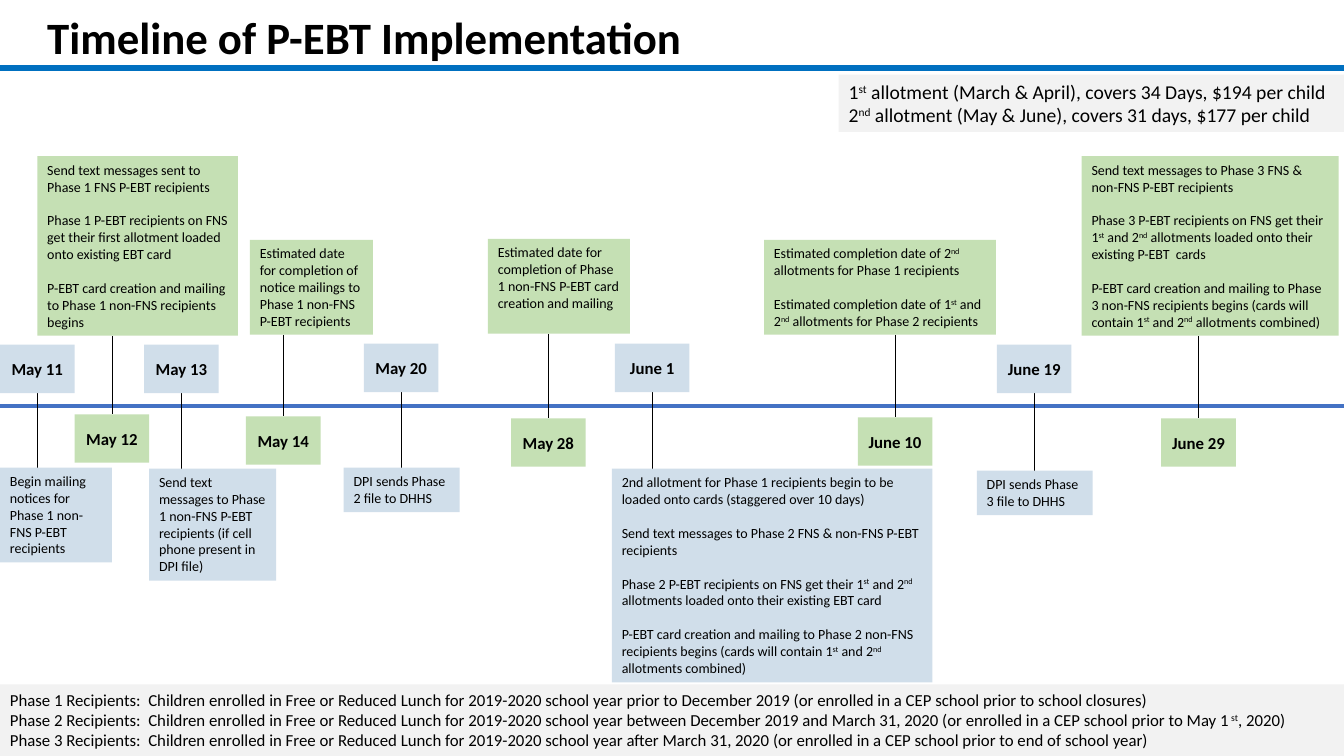
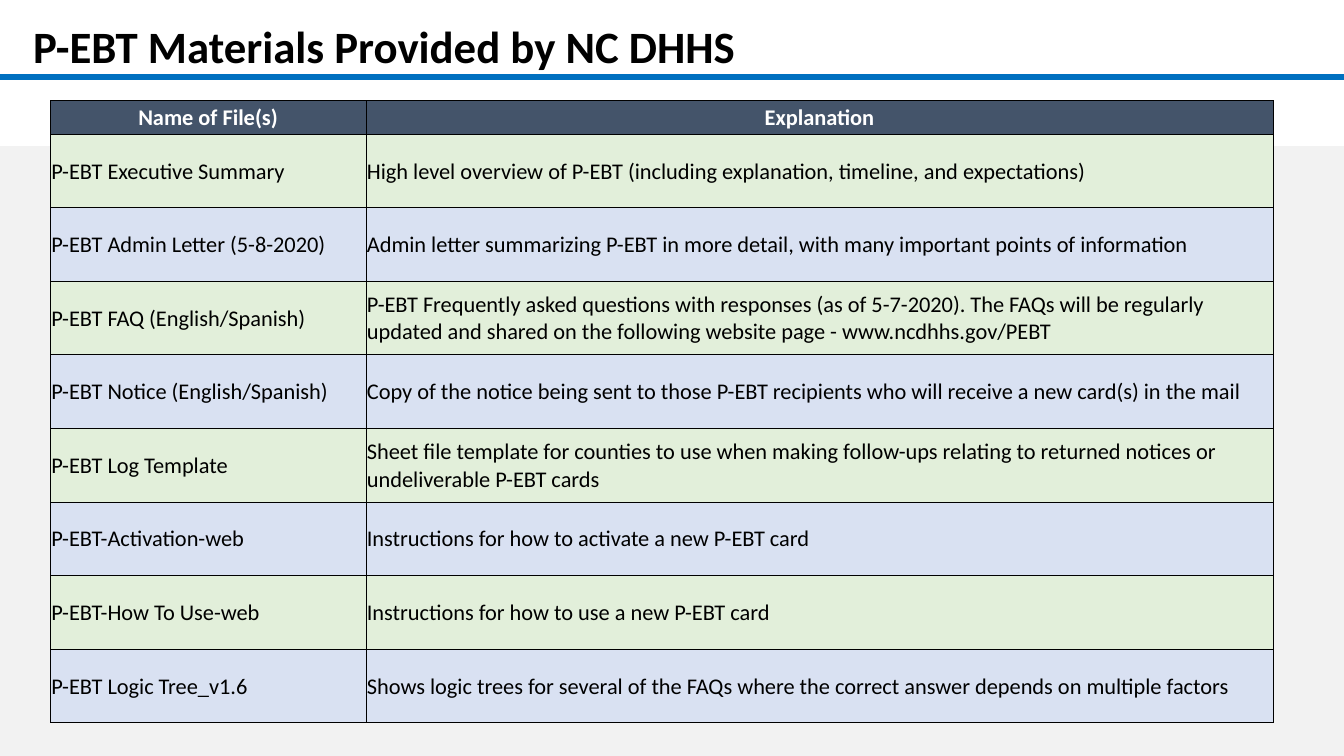
"""Build two slides on P-EBT: the implementation timeline and the materials table."""
from dataclasses import dataclass

from lxml.etree import SubElement
from pptx import Presentation
from pptx.dml.color import RGBColor
from pptx.enum.shapes import MSO_CONNECTOR, MSO_SHAPE
from pptx.enum.text import MSO_ANCHOR, PP_ALIGN
from pptx.oxml.ns import qn
from pptx.util import Inches, Pt

CELL = Inches(0.1)
COLUMNS, ROWS = 133.33, 75
FONT = "Calibri"
BLACK = RGBColor(0x00, 0x00, 0x00)
WHITE = RGBColor(0xFF, 0xFF, 0xFF)
TITLE_BLUE = RGBColor(0x00, 0x70, 0xC0)
AXIS_BLUE = RGBColor(0x44, 0x72, 0xC4)
PALE_BLUE = RGBColor(0xD0, 0xDE, 0xEA)
PALE_GREEN = RGBColor(0xC5, 0xE0, 0xB4)
PALE_GREY = RGBColor(0xF2, 0xF2, 0xF2)
HEADING_SLATE = RGBColor(0x44, 0x54, 0x6A)
ROW_GREEN = RGBColor(0xE2, 0xEF, 0xDA)
ROW_BLUE = RGBColor(0xD9, 0xE1, 0xF2)

AXIS_ROW = 40.3
DATE_WIDTH, DATE_HEIGHT = 7.4, 4.8
TABLE_COLUMNS = (31.3, 90)
HEADING_HEIGHT, MATERIAL_HEIGHT = 3.3, 7.3


@dataclass
class Event:
    """A date on the timeline with its note, measured in grid cells."""
    date: str
    left: float
    top: float
    note: tuple
    paragraphs: tuple


EVENTS = (
    Event("May 11", 0, 34.2, (0, 46.4, 11.1, 9.4), (
        "Begin mailing notices for Phase 1 non-FNS P-EBT recipients",)),
    Event("May 12", 7.4, 41.1, (3.7, 15.5, 19.9, 17.8), (
        "Send text messages sent to Phase 1 FNS P-EBT recipients",
        "Phase 1 P-EBT recipients on FNS get their first allotment loaded onto existing EBT card",
        "P-EBT card creation and mailing to Phase 1 non-FNS recipients begins")),
    Event("May 13", 14.3, 34.2, (14.8, 46.5, 12.6, 11.1), (
        "Send text messages to Phase 1 non-FNS P-EBT recipients (if cell phone present in DPI file)",)),
    Event("May 14", 24.4, 41.3, (24.8, 23.8, 12.2, 9.4), (
        "Estimated date for completion of notice mailings to Phase 1 non-FNS P-EBT recipients",)),
    Event("May 20", 36.1, 34.1, (34.1, 46.4, 11.5, 4.4), (
        "DPI sends Phase 2 file to DHHS",)),
    Event("May 28", 50.7, 41.5, (48.4, 23.7, 14.1, 9.4), (
        "Estimated date for completion of Phase 1 non-FNS P-EBT card creation and mailing",)),
    Event("June 1", 61, 34.1, (60.7, 46.5, 31.8, 21.2), (
        "2nd allotment for Phase 1 recipients begin to be loaded onto cards (staggered over 10 days)",
        "Send text messages to Phase 2 FNS & non-FNS P-EBT recipients",
        "Phase 2 P-EBT recipients on FNS get their 1^st^ and 2^nd^ allotments loaded onto their "
        "existing EBT card",
        "P-EBT card creation and mailing to Phase 2 non-FNS recipients begins (cards will contain "
        "1^st^ and 2^nd^ allotments combined)")),
    Event("June 10", 85.1, 41.4, (75.8, 23.8, 23, 9.4), (
        "Estimated completion date of 2^nd^ allotments for Phase 1 recipients",
        "Estimated completion date of 1^st^ and 2^nd^ allotments for Phase 2 recipients")),
    Event("June 19", 98.9, 34.2, (96.9, 46.7, 11.5, 4.4), (
        "DPI sends Phase 3 file to DHHS",)),
    Event("June 29", 115.2, 41.5, (107.3, 15.5, 25.5, 17.8), (
        "Send text messages to Phase 3 FNS & non-FNS P-EBT recipients",
        "Phase 3 P-EBT recipients on FNS get their 1^st^ and 2^nd^ allotments loaded onto their "
        "existing P-EBT  cards",
        "P-EBT card creation and mailing to Phase 3 non-FNS recipients begins (cards will contain "
        "1^st^ and 2^nd^ allotments combined)")),
)

ALLOTMENTS = (
    "1^st^ allotment (March & April), covers 34 Days, $194 per child",
    "2^nd^ allotment (May & June), covers 31 days, $177 per child",
)

PHASES = (
    "Phase 1 Recipients:  Children enrolled in Free or Reduced Lunch for 2019-2020 school year "
    "prior to December 2019 (or enrolled in a CEP school prior to school closures)",
    "Phase 2 Recipients:  Children enrolled in Free or Reduced Lunch for 2019-2020 school year "
    "between December 2019 and March 31, 2020 (or enrolled in a CEP school prior to May 1^st^, 2020)",
    "Phase 3 Recipients:  Children enrolled in Free or Reduced Lunch for 2019-2020 school year "
    "after March 31, 2020 (or enrolled in a CEP school prior to end of school year)",
)

MATERIALS = (
    ("Name of File(s)", "Explanation"),
    ("P-EBT Executive Summary",
     "High level overview of P-EBT (including explanation, timeline, and expectations)"),
    ("P-EBT Admin Letter (5-8-2020)",
     "Admin letter summarizing P-EBT in more detail, with many important points of information"),
    ("P-EBT FAQ (English/Spanish)",
     "P-EBT Frequently asked questions with responses (as of 5-7-2020). The FAQs will be regularly "
     "updated and shared on the following website page - www.ncdhhs.gov/PEBT"),
    ("P-EBT Notice (English/Spanish)",
     "Copy of the notice being sent to those P-EBT recipients who will receive a new card(s) in the mail"),
    ("P-EBT Log Template",
     "Sheet file template for counties to use when making follow-ups relating to returned notices or "
     "undeliverable P-EBT cards"),
    ("P-EBT-Activation-web", "Instructions for how to activate a new P-EBT card"),
    ("P-EBT-How To Use-web", "Instructions for how to use a new P-EBT card"),
    ("P-EBT Logic Tree_v1.6",
     "Shows logic trees for several of the FAQs where the correct answer depends on multiple factors"),
)


def grid(*cells):
    """Turn counts of grid cells into lengths."""
    return [round(count * CELL) for count in cells]


def write(frame, paragraphs, size, bold=False, color=BLACK, align=PP_ALIGN.LEFT, gap=0):
    """Fill a text frame; parts between carets are superscript."""
    frame.word_wrap = True
    for index, text in enumerate(paragraphs):
        para = frame.add_paragraph() if index else frame.paragraphs[0]
        para.alignment = align
        para.space_before = Pt(gap if index else 0)
        for position, part in enumerate(text.split("^")):
            span = para.add_run()
            span.text = part
            span.font.name, span.font.size = FONT, Pt(size)
            span.font.bold, span.font.color.rgb = bold, color
            if position % 2:
                span.font._element.set("baseline", "30000")


def add_panel(page, area, fill, paragraphs=(), size=10, gap=0):
    """Add a flat rectangle with text from its top left."""
    box = page.shapes.add_shape(MSO_SHAPE.RECTANGLE, *grid(*area))
    box.shadow.inherit = False
    box.fill.solid()
    box.fill.fore_color.rgb = fill
    box.line.fill.background()
    box.text_frame.vertical_anchor = MSO_ANCHOR.TOP
    write(box.text_frame, paragraphs, size, gap=gap)
    return box


def add_line(page, start, end, color, width):
    """Draw a straight line between two grid points."""
    line = page.shapes.add_connector(MSO_CONNECTOR.STRAIGHT, *grid(*start, *end))
    line.line.color.rgb = color
    line.line.width = Pt(width)
    SubElement(line._element.spPr, qn("a:effectLst"))


def add_title(page, text, left, top):
    """Add the slide title and the blue rule beneath it."""
    rule = top + 6.25
    add_line(page, (0, rule), (COLUMNS, rule), TITLE_BLUE, 4.5)
    box = page.shapes.add_textbox(*grid(left, top, 118.3, 6.4))
    write(box.text_frame, (text,), 32, bold=True)


def add_event(page, event):
    """Add a date, its note and the line that joins them across the axis."""
    date_above = event.top < AXIS_ROW
    fill = PALE_BLUE if date_above else PALE_GREEN
    center = event.left + DATE_WIDTH / 2
    note_top, note_height = event.note[1], event.note[3]
    if date_above:
        start, end = event.top + DATE_HEIGHT, note_top
    else:
        start, end = note_top + note_height, event.top
    add_line(page, (center, start), (center, end), BLACK, 0.5)
    add_panel(page, event.note, fill, event.paragraphs, gap=12.2)
    date = add_panel(page, (event.left, event.top, DATE_WIDTH, DATE_HEIGHT), fill)
    frame = date.text_frame
    frame.vertical_anchor = MSO_ANCHOR.MIDDLE
    frame.margin_left = frame.margin_right = Inches(0.05)
    write(frame, (event.date,), 12, bold=True, align=PP_ALIGN.CENTER)


def add_borders(cell):
    """Give a table cell thin black borders."""
    properties = cell._tc.get_or_add_tcPr()
    for side in ("a:lnL", "a:lnR", "a:lnT", "a:lnB"):
        border = SubElement(properties, qn(side), w=str(Pt(0.5)))
        SubElement(SubElement(border, qn("a:solidFill")), qn("a:srgbClr"), val=str(BLACK))


def fill_cell(cell, text, row):
    """Style one cell by its row: heading, then alternating bands."""
    add_borders(cell)
    cell.fill.solid()
    cell.vertical_anchor = MSO_ANCHOR.MIDDLE
    cell.margin_left = cell.margin_right = cell.margin_top = Inches(0.01)
    cell.margin_bottom = 0
    if row == 0:
        cell.fill.fore_color.rgb = HEADING_SLATE
        write(cell.text_frame, (text,), 16, True, WHITE, PP_ALIGN.CENTER)
    else:
        cell.fill.fore_color.rgb = ROW_GREEN if row % 2 else ROW_BLUE
        write(cell.text_frame, (text,), 16)


def add_materials(page, left, top):
    """Add the table of files and explanations."""
    heights = [HEADING_HEIGHT] + [MATERIAL_HEIGHT] * (len(MATERIALS) - 1)
    area = grid(left, top, sum(TABLE_COLUMNS), sum(heights))
    table = page.shapes.add_table(len(MATERIALS), len(TABLE_COLUMNS), *area).table
    for column, width in zip(table.columns, grid(*TABLE_COLUMNS)):
        column.width = width
    for row, height in enumerate(grid(*heights)):
        table.rows[row].height = height
        for column, text in enumerate(MATERIALS[row]):
            fill_cell(table.cell(row, column), text, row)


def build_timeline(page):
    """Lay out the timeline slide."""
    add_title(page, "Timeline of P-EBT Implementation", 3.7, 0.5)
    add_line(page, (0, AXIS_ROW), (COLUMNS, AXIS_ROW), AXIS_BLUE, 3)
    for event in EVENTS:
        add_event(page, event)
    add_panel(page, (83.2, 7.4, COLUMNS - 83.2, 5.7), PALE_GREY, ALLOTMENTS, 14)
    add_panel(page, (0, 67.9, COLUMNS, ROWS - 67.9), PALE_GREY, PHASES, 12)


def build_materials(page):
    """Lay out the materials slide."""
    add_panel(page, (0, 14.5, COLUMNS, ROWS - 14.5), PALE_GREY)
    add_title(page, "P-EBT Materials Provided by NC DHHS", 2.3, 1.4)
    add_materials(page, 5, 10)


def main():
    """Build and save the deck."""
    deck = Presentation()
    deck.slide_width, deck.slide_height = grid(COLUMNS, ROWS)
    for build in (build_timeline, build_materials):
        build(deck.slides.add_slide(deck.slide_layouts[6]))
    deck.save("out.pptx")


if __name__ == "__main__":
    main()
